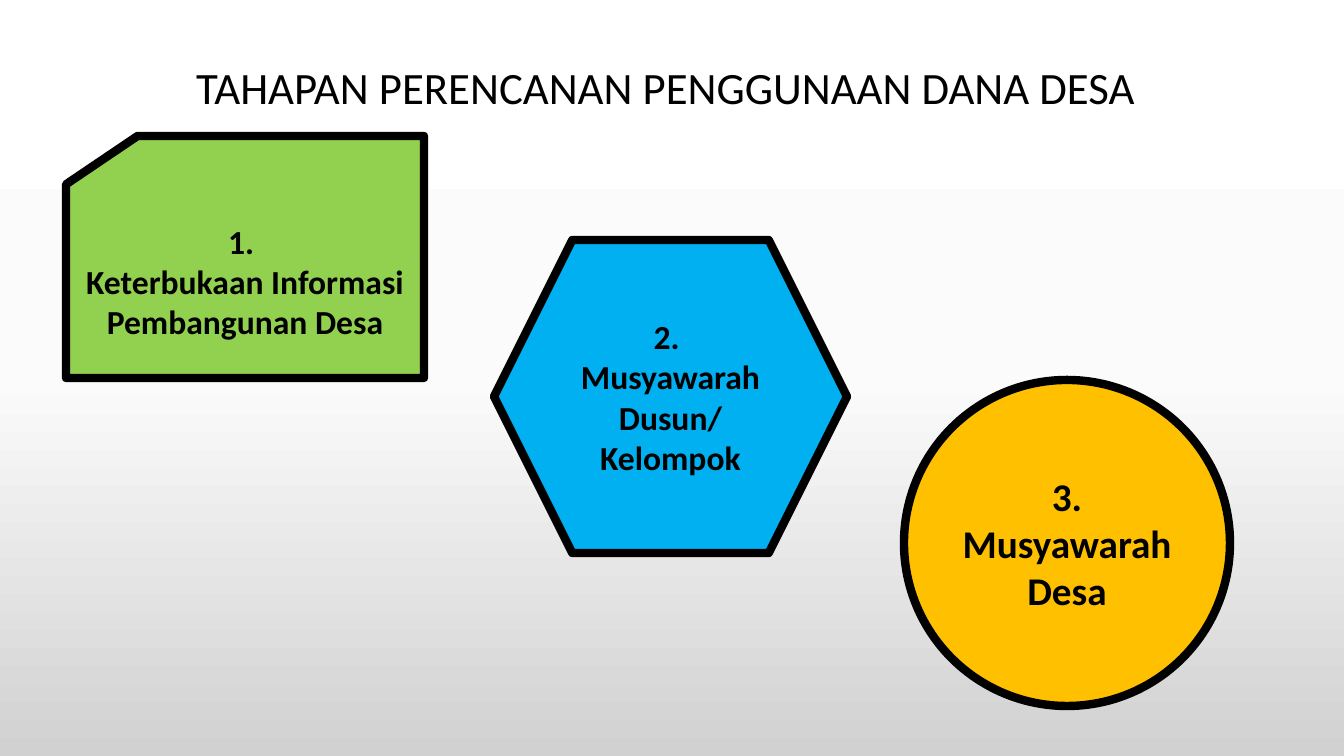
import copy
import pptx
import pptx.dml.color
import pptx.enum.shapes
import pptx.enum.text
import pptx.util

RGB = pptx.dml.color.RGBColor
BLACK = RGB(0x00, 0x00, 0x00)
GREEN = RGB(0x92, 0xD0, 0x50)
BLUE = RGB(0x00, 0xB0, 0xF0)
GOLD = RGB(0xFF, 0xC0, 0x00)
WHITE = RGB(0xFF, 0xFF, 0xFF)
PALE = RGB(0xFB, 0xFB, 0xFB)
GREY = RGB(0xD1, 0xD1, 0xD1)
KIND = pptx.enum.shapes.MSO_SHAPE
ANCHOR = pptx.enum.text.MSO_ANCHOR
SCALE = 914400 / 100.8


def px(n):
    return pptx.util.Emu(round(n * SCALE))


def style(frame, size, bold):
    for par in frame.paragraphs:
        par.alignment = pptx.enum.text.PP_ALIGN.CENTER
        for run in par.runs:
            run.font.name = "Calibri"
            run.font.size = pptx.util.Pt(size)
            run.font.bold = bold
            run.font.color.rgb = BLACK


deck = pptx.Presentation()
deck.slide_width, deck.slide_height = px(1344), px(756)
slide = deck.slides.add_slide(deck.slide_layouts[5])

# Background: three-stop gradient, top to bottom
fill = slide.background.fill
fill.gradient()
fill.gradient_angle = 270
first = next(slide.element.iter("{*}gs"))
first.addnext(copy.deepcopy(first))
for stop, (pos, tone) in zip(fill.gradient_stops,
                             [(0, WHITE), (0.5, PALE), (1, GREY)]):
    stop.position = pos
    stop.color.rgb = tone

# Title
title = slide.shapes.title
title.left, title.top, title.width, title.height = map(px, (54, 55, 1224, 65))
frame = title.text_frame
frame.text = "TAHAPAN PERENCANAN PENGGUNAAN DANA DESA"
frame.auto_size = pptx.enum.text.MSO_AUTO_SIZE.NONE
frame.vertical_anchor = ANCHOR.TOP
style(frame, 32, False)

# Planning steps, from back to front
steps = [
    (KIND.OVAL, (904, 380, 326, 326), GOLD, 28, "3. Musyawarah Desa"),
    (KIND.HEXAGON, (494, 240, 353, 313), BLUE, 24,
     "2. \nMusyawarah Dusun/ Kelompok"),
    (KIND.FLOWCHART_CARD, (66, 136, 358, 242), GREEN, 24,
     "1. \nKeterbukaan Informasi Pembangunan Desa"),
]
for kind, box, tone, size, text in steps:
    step = slide.shapes.add_shape(kind, *map(px, box))
    step.shadow.inherit = False
    step.fill.solid()
    step.fill.fore_color.rgb = tone
    step.line.color.rgb = BLACK
    step.line.width = pptx.util.Pt(6)
    frame = step.text_frame
    frame.text = text
    frame.word_wrap = True
    frame.vertical_anchor = ANCHOR.MIDDLE
    style(frame, size, True)

deck.save("out.pptx")
